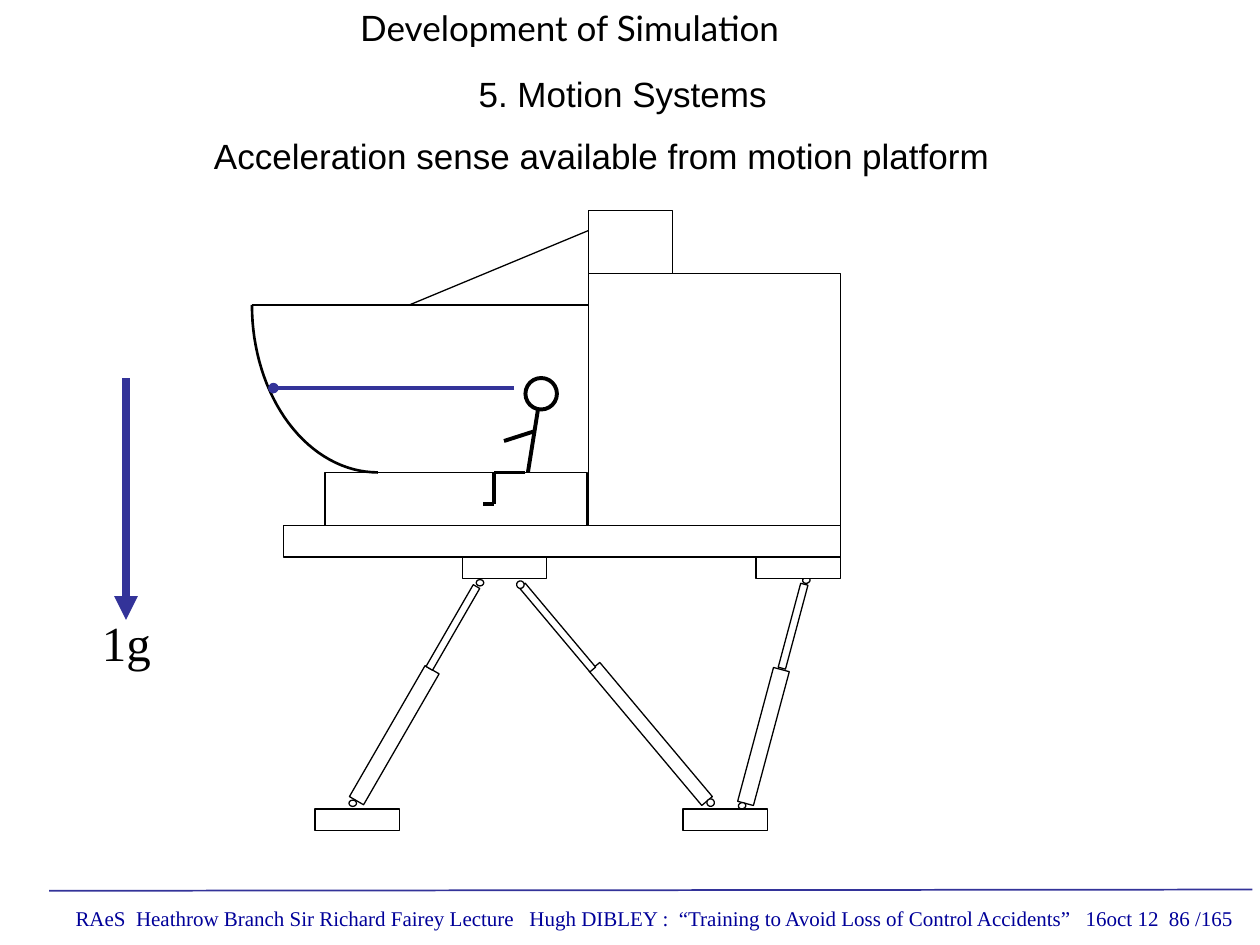
import math

import lxml.etree
import pptx
import pptx.dml.color
import pptx.enum.dml
import pptx.enum.shapes
import pptx.enum.text
import pptx.oxml.ns
import pptx.util

Inches, Pt = pptx.util.Inches, pptx.util.Pt
RGBColor = pptx.dml.color.RGBColor
MSO_SHAPE = pptx.enum.shapes.MSO_SHAPE
RECT, OVAL = MSO_SHAPE.RECTANGLE, MSO_SHAPE.OVAL
PP_ALIGN = pptx.enum.text.PP_ALIGN
qn = pptx.oxml.ns.qn

BLACK = RGBColor(0x00, 0x00, 0x00)
WHITE = RGBColor(0xFF, 0xFF, 0xFF)
INDIGO = RGBColor(0x33, 0x33, 0x99)
NAVY = RGBColor(0x00, 0x00, 0x99)


def add_outlined(shapes, kind, at, rotation=0, weight=0.75, filled=True):
    sp = shapes.add_shape(kind, *[Inches(v) for v in at])
    sp.shadow.inherit = False
    sp.rotation = rotation
    if filled:
        sp.fill.solid()
        sp.fill.fore_color.rgb = WHITE
    else:
        sp.fill.background()
    sp.line.color.rgb = BLACK
    sp.line.width = Pt(weight)


def add_line(shapes, ends, color=BLACK, weight=0.75, tail=None):
    """Draw a straight line over (x1, y1, x2, y2), with an optional end marker."""
    cxn = shapes.add_connector(pptx.enum.shapes.MSO_CONNECTOR.STRAIGHT,
                               *[Inches(v) for v in ends])
    cxn.line.color.rgb = color
    cxn.line.width = Pt(weight)
    spPr = cxn._element.spPr
    lxml.etree.SubElement(spPr, qn("a:effectLst"))
    if tail:
        ln = spPr.find(qn("a:ln"))
        lxml.etree.SubElement(ln, qn("a:tailEnd"), type=tail)


prs = pptx.Presentation()
prs.slide_width, prs.slide_height = Inches(10), Inches(7.5)
s = prs.slides.add_slide(prs.slide_layouts[6])

add_line(s.shapes, (0.39, 7.07, 9.94, 7.06), INDIGO, 1)

# Floor pads
for left in (2.5, 5.42):
    add_outlined(s.shapes, RECT, (left, 6.42, 0.67, 0.17))

# Hydraulic legs: leg angle, joint angle, cylinder, rod, upper and lower joint
legs = [
    (230, 290, (4.47, 5.77, 1.39, 0.11), (3.99, 4.95, 0.87, 0.06),
     (4.1, 4.61, 0.06, 0.06), (5.61, 6.34, 0.06, 0.06)),
    (300, 0, (2.53, 5.77, 1.2, 0.13), (3.22, 4.95, 0.75, 0.06),
     (3.78, 4.6, 0.06, 0.05), (2.77, 6.35, 0.06, 0.05)),
    (285, 345, (5.51, 5.78, 1.1, 0.13), (5.95, 4.94, 0.69, 0.06),
     (6.37, 4.58, 0.06, 0.05), (5.86, 6.37, 0.06, 0.05)),
]
for leg_angle, joint_angle, cylinder, rod, upper, lower in legs:
    leg = s.shapes.add_group_shape().shapes
    for part in (cylinder, rod):
        add_outlined(leg, RECT, part, leg_angle)
    for joint in (upper, lower):
        add_outlined(leg, OVAL, joint, joint_angle)

# Simulator cab
cab = s.shapes.add_group_shape().shapes
add_line(cab, (2, 2.42, 4.67, 2.42))
for part in [
    (2.25, 4.17, 4.42, 0.25),   # platform
    (3.67, 4.42, 0.67, 0.17),   # front mount
    (6, 4.42, 0.67, 0.17),      # rear mount
    (4.67, 2.17, 2, 2),         # cabin
    (4.67, 1.67, 0.67, 0.5),    # projector
    (2.58, 3.75, 2.08, 0.42),   # cockpit floor
]:
    add_outlined(cab, RECT, part)
add_line(cab, (3.25, 2.42, 4.67, 1.83))

# Seated pilot
add_outlined(cab, OVAL, (4.17, 3, 0.25, 0.25), weight=2.25, filled=False)
for limb in [
    (4.27, 3.25, 4.19, 3.75),   # back
    (4.17, 3.75, 3.92, 3.75),   # thigh
    (3.92, 3.75, 3.92, 4),      # shin
    (3.92, 4, 3.83, 4),         # foot
    (4.25, 3.42, 4, 3.5),       # arm
]:
    add_line(cab, limb, weight=2.25)

# Curved screen: a quarter ellipse from the floor up to the roof
STEPS = 32
angles = [math.pi / 2 * i / STEPS for i in range(STEPS + 1)]
curve = [(Inches(3 - math.sin(a)), Inches(2.42 + 1.33 * math.cos(a))) for a in angles]
fb = cab.build_freeform(*curve[0])
fb.add_line_segments(curve[1:], close=False)
screen = fb.convert_to_shape()
screen.shadow.inherit = False
screen.fill.background()
screen.line.color.rgb = BLACK
screen.line.width = Pt(1.5)

add_line(cab, (4.08, 3.08, 2.17, 3.08), INDIGO, 2, "oval")
add_line(s.shapes, (1, 3, 1, 4.92), INDIGO, 4.5, "triangle")

# Text: wording, box, wrap, paragraph format, font format
texts = [
    ("RAeS  Heathrow Branch Sir Richard Fairey Lecture   Hugh DIBLEY :  "
     "“Training to Avoid Loss of Control Accidents”   16oct 12  86 /165",
     (0.4, 7.14, 9.6, 0.3), True, {"alignment": PP_ALIGN.CENTER},
     {"name": "Times New Roman", "size": Pt(12)}, NAVY),
    ("1g", (0.71, 4.9, 0.59, 0.47), True, {"line_spacing": 0.8},
     {"name": "Times New Roman", "size": Pt(28)}, BLACK),
    ("Development of Simulation", (2.76, 0, 4.48, 0.43), False, {},
     {"name": "Lato", "size": Pt(20)}, BLACK),
    ("Acceleration sense available from motion platform",
     (1.6, 1.02, 6.86, 0.43), False, {},
     {"name": "Arial", "size": Pt(20)}, BLACK),
    ("5. Motion Systems", (3.7, 0.53, 2.64, 0.43), False, {},
     {"name": "Arial", "size": Pt(20)}, BLACK),
]
for text, at, wrap, paragraph_format, font_format, color in texts:
    tf = s.shapes.add_textbox(*[Inches(v) for v in at]).text_frame
    tf.word_wrap = wrap
    tf.auto_size = pptx.enum.text.MSO_AUTO_SIZE.SHAPE_TO_FIT_TEXT
    p = tf.paragraphs[0]
    for key, value in paragraph_format.items():
        setattr(p, key, value)
    r = p.add_run()
    r.text = text
    for key, value in font_format.items():
        setattr(r.font, key, value)
    r.font.color.rgb = color

prs.save("out.pptx")
